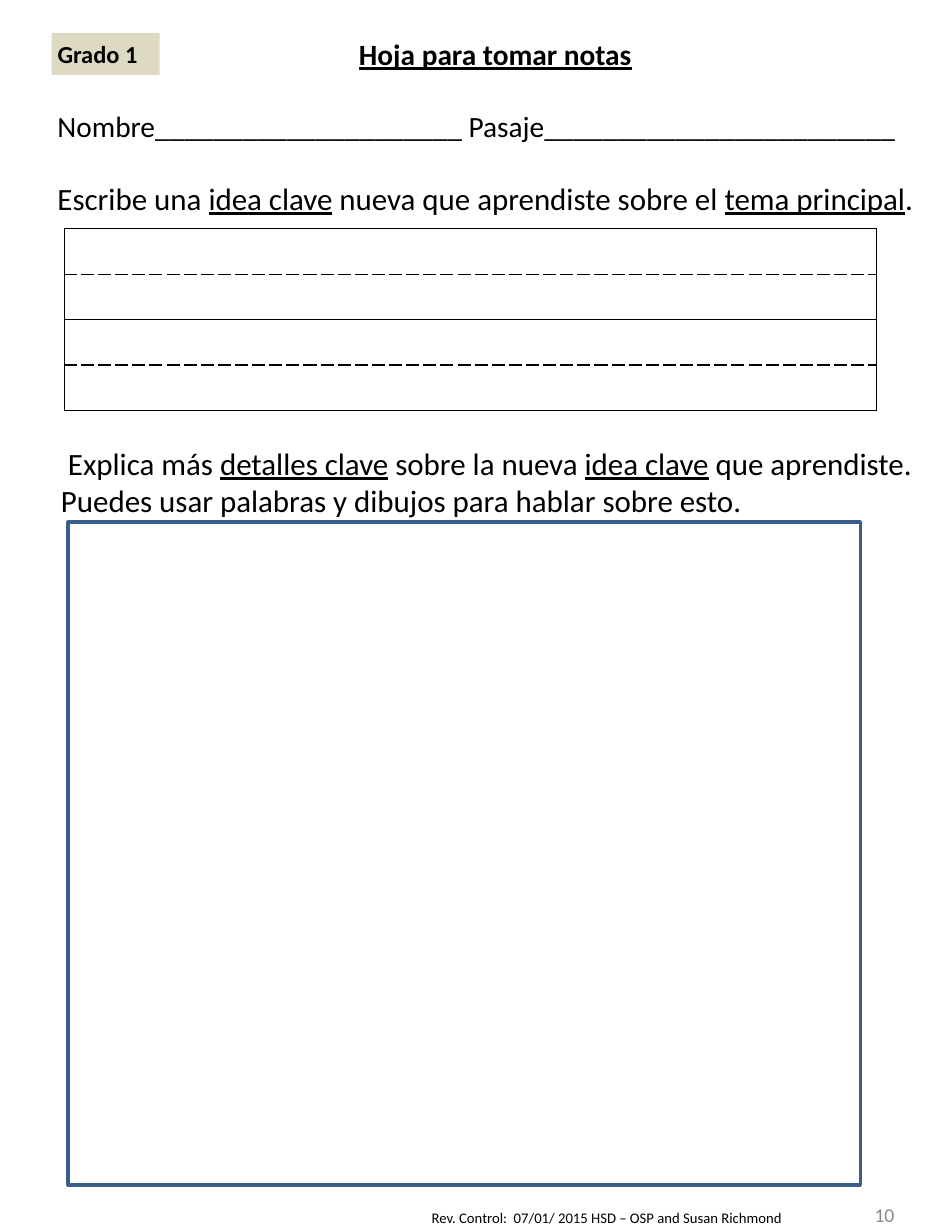
from dataclasses import dataclass

from lxml.etree import SubElement
from pptx import Presentation
from pptx.dml.color import RGBColor
from pptx.enum.shapes import MSO_SHAPE
from pptx.enum.text import MSO_ANCHOR, MSO_AUTO_SIZE, PP_ALIGN
from pptx.oxml.ns import qn
from pptx.util import Inches, Pt

BLACK = "000000"
WHITE = "FFFFFF"
ROWS = 4


@dataclass
class Note:
    text: str
    left: float
    top: float
    width: float
    height: float
    size: float
    bold: bool = False
    color: str = BLACK
    align: PP_ALIGN = PP_ALIGN.LEFT
    anchor: MSO_ANCHOR = MSO_ANCHOR.TOP
    side: float = 0.05
    edge: float = 0.05


TITLE = Note("*Hoja para tomar notas*", 0.44, 0.26, 7.56, 0.41, 18, True,
             align=PP_ALIGN.CENTER)
GRADE = Note("Grado 1", 0.44, 0.28, 0.92, 0.36, 15, True)
NOTES = [
    Note("Nombre_____________________ Pasaje________________________",
         0.44, 0.87, 7.56, 0.41, 18),
    Note("Escribe una *idea clave* nueva que aprendiste sobre el *tema principal*.",
         0.44, 1.48, 7.56, 0.42, 19),
    Note(" Explica más *detalles clave* sobre la nueva *idea clave* que aprendiste. "
         "Puedes usar palabras y dibujos para hablar sobre esto.",
         0.47, 3.74, 7.46, 0.74, 19),
    Note("Rev. Control:  07/01/ 2015 HSD – OSP and Susan Richmond",
         3.58, 10.25, 4, 0.25, 9, side=0.1),
    Note("10", 6.75, 10.2, 0.87, 0.3, 12, color="888888", align=PP_ALIGN.RIGHT,
         anchor=MSO_ANCHOR.MIDDLE, side=0, edge=0),
]


def paint(target, color: str) -> None:
    target.solid()
    target.fore_color.rgb = RGBColor.from_string(color)


def place(note: Note) -> list:
    return [Inches(n) for n in (note.left, note.top, note.width, note.height)]


def write(shape, note: Note) -> None:
    shape.left, shape.top, shape.width, shape.height = place(note)
    frame = shape.text_frame
    frame.word_wrap = True
    frame.auto_size = MSO_AUTO_SIZE.NONE
    frame.vertical_anchor = note.anchor
    frame.margin_left = frame.margin_right = Inches(note.side)
    frame.margin_top = frame.margin_bottom = Inches(note.edge)
    para = frame.paragraphs[0]
    para.alignment = note.align
    for spot, part in enumerate(note.text.split("*")):
        if part:
            run = para.add_run()
            run.text = part
            font = run.font
            font.name = "Calibri"
            font.size = Pt(note.size)
            font.bold = note.bold
            font.underline = spot % 2 == 1
            paint(font.fill, note.color)


def add_box(slide, left: float, top: float, width: float, height: float):
    box = slide.shapes.add_shape(MSO_SHAPE.RECTANGLE, Inches(left), Inches(top),
                                 Inches(width), Inches(height))
    box.shadow.inherit = False
    return box


def add_edge(cell, side: str, dash: str) -> None:
    line = SubElement(cell._tc.get_or_add_tcPr(), qn(f"a:ln{side}"), w=str(Pt(1)))
    fill = SubElement(line, qn("a:solidFill"))
    SubElement(fill, qn("a:srgbClr"), val=BLACK)
    SubElement(line, qn("a:prstDash"), val=dash)


def add_lines(slide) -> None:
    table = slide.shapes.add_table(ROWS, 1, Inches(0.55), Inches(1.95),
                                   Inches(6.92), Inches(1.55)).table
    table.first_row = table.horz_banding = False
    for spot in range(ROWS):
        cell = table.cell(spot, 0)
        cell.margin_top = cell.margin_bottom = 0
        upper = spot % 2 == 0
        add_edge(cell, "L", "solid")
        add_edge(cell, "R", "solid")
        add_edge(cell, "T", "solid" if upper else "sysDash")
        add_edge(cell, "B", "sysDash" if upper else "solid")
        paint(cell.fill, WHITE)


def main() -> None:
    deck = Presentation()
    deck.slide_width, deck.slide_height = Inches(8), Inches(10.5)
    slide = deck.slides.add_slide(deck.slide_layouts[5])
    write(slide.shapes.title, TITLE)
    add_lines(slide)
    for note in NOTES:
        write(slide.shapes.add_textbox(*place(note)), note)

    frame = add_box(slide, 0.58, 4.45, 6.75, 5.65)
    frame.fill.background()
    paint(frame.line.fill, "3A5E8A")
    frame.line.width = Pt(2)

    grade = add_box(slide, GRADE.left, GRADE.top, GRADE.width, GRADE.height)
    paint(grade.fill, "DDD9C3")
    grade.line.fill.background()
    write(grade, GRADE)
    deck.save("out.pptx")


if __name__ == "__main__":
    main()
